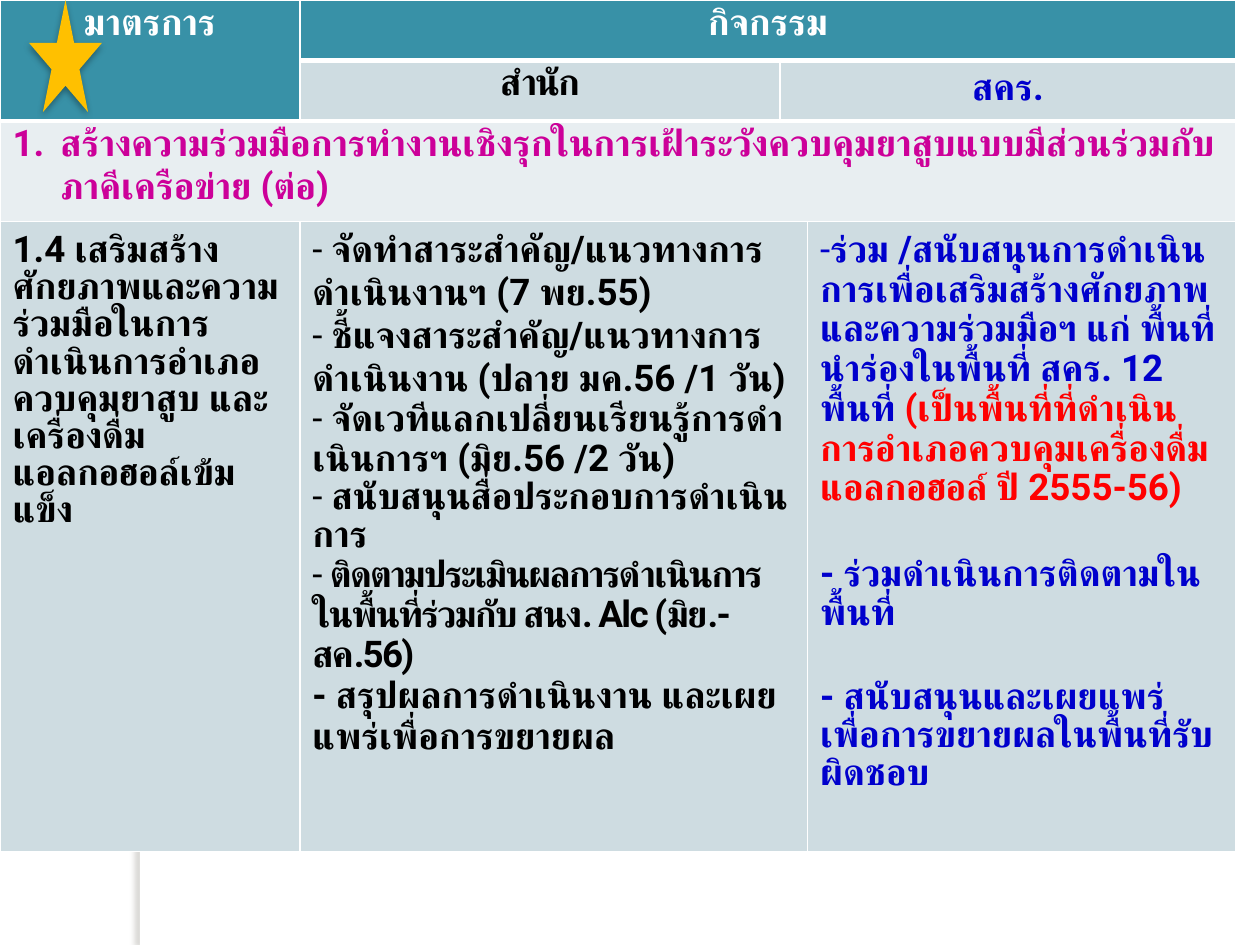
"""Build a slide with a table of measures and activities."""
import pptx
import pptx.util
import pptx.dml.color
import pptx.enum.shapes
import pptx.enum.text
import pptx.oxml
import pptx.oxml.ns
import lxml.etree

Inches = pptx.util.Inches
Pt = pptx.util.Pt
qn = pptx.oxml.ns.qn
FONT = "Roboto"
BLACK, WHITE, BLUE, RED, PINK = "000000", "FFFFFF", "0000CC", "FF0000", "CC0099"
TEAL, MIST, PALE = "3891A7", "CEDCE1", "E8EEF1"
TASKS = [
    (" จัดทำสาระสำคัญ/แนวทางการดำเนินงานฯ (7 พย.55)", 0, 0),
    (" ชี้แจงสาระสำคัญ/แนวทางการดำเนินงาน (ปลาย มค.56 /1 วัน)", 0, 0),
    (" จัดเวทีแลกเปลี่ยนเรียนรู้การดำเนินการฯ (มิย.56 /2 วัน)", 22.9, 0),
    (" สนับสนุนสื่อประกอบการดำเนินการ", 21.7, 0),
    (" ติดตามประเมินผลการดำเนินการ ในพื้นที่ร่วมกับ สนง. Alc (มิย.-สค.56)", 22.9, -1),
]


def color(code):
    """Return the colour for a hex string."""
    return pptx.dml.color.RGBColor.from_string(code)


def line(text, tint=BLACK, **opts):
    """Describe a paragraph made of a single run."""
    return {"runs": [(text, tint)], **opts}


def add_para(para, runs, mark=None, hang=0, gap=0, pitch=0, tight=0, mid=False):
    """Fill a paragraph with styled runs and an optional bullet."""
    if mid:
        para.alignment = pptx.enum.text.PP_ALIGN.CENTER
    if gap:
        para.space_before = Pt(gap)
    if pitch:
        para.line_spacing = Pt(pitch)
    for text, tint in runs:
        run = para.add_run()
        run.text = text
        font = run.font
        font.name, font.size, font.bold = FONT, Pt(21), True
        font.color.rgb = color(tint)
        props = run._r.get_or_add_rPr()
        lxml.etree.SubElement(props, qn("a:cs")).set("typeface", FONT)
        if tight:
            props.set("spc", str(tight * 100))
    if mark:
        props = para._p.get_or_add_pPr()
        props.set("marL", str(Inches(hang)))
        props.set("indent", str(-Inches(hang)))
        lxml.etree.SubElement(props, qn("a:buFont")).set("typeface", FONT)
        if mark == "-":
            lxml.etree.SubElement(props, qn("a:buChar")).set("char", mark)
        else:
            lxml.etree.SubElement(props, qn("a:buAutoNum")).set("type", mark)


def add_edges(cell, base):
    """Draw white borders around a cell, with the given base width."""
    props = cell._tc.get_or_add_tcPr()
    for spot, (side, width) in enumerate(zip("LRTB", (1, 1, 1, base))):
        edge = pptx.oxml.parse_xml(
            f'<a:ln{side} xmlns:a="http://schemas.openxmlformats.org/drawingml/2006/main" '
            f'w="{Pt(width)}"><a:solidFill><a:srgbClr val="{WHITE}"/></a:solidFill></a:ln{side}>')
        props.insert(spot, edge)


def fill_cell(cell, fill, top, paras):
    """Set the fill, the top margin and the paragraphs of a cell."""
    cell.fill.solid()
    cell.fill.fore_color.rgb = color(fill)
    cell.margin_top = Inches(top)
    frame = cell.text_frame
    for spot, item in enumerate(paras):
        para = frame.add_paragraph() if spot else frame.paragraphs[0]
        add_para(para, **item)


def add_grid(slide):
    """Add the table with its merged cells."""
    cols, rows = [2.38, 3.81, 0.22, 3.4], [0.48, 0.48, 0.8, 5]
    frame = slide.shapes.add_table(4, 4, 0, 0, Inches(sum(cols)), Inches(sum(rows)))
    grid = frame.table
    grid.first_row = grid.horz_banding = False
    for col, width in zip(grid.columns, cols):
        col.width = Inches(width)
    for row, height in zip(grid.rows, rows):
        row.height = Inches(height)
    for first, last in [((0, 0), (1, 0)), ((0, 1), (0, 3)), ((1, 2), (1, 3)),
                        ((2, 0), (2, 3)), ((3, 1), (3, 2))]:
        grid.cell(*first).merge(grid.cell(*last))
    cells = {
        (0, 0): (TEAL, 0.01, [line("มาตรการ", WHITE, mid=True)]),
        (0, 1): (TEAL, 0.01, [line("กิจกรรม", WHITE, mid=True)]),
        (1, 1): (MIST, 0.01, [line("สำนัก", tight=-1, mid=True)]),
        (1, 2): (MIST, 0.05, [line("สคร.", BLUE, mid=True)]),
        (2, 0): (PALE, 0.01, [line(
            "สร้างความร่วมมือการทำงานเชิงรุกในการเฝ้าระวังควบคุมยาสูบแบบมีส่วนร่วมกับภาคีเครือข่าย (ต่อ)",
            PINK, mark="arabicPeriod", hang=0.38)]),
        (3, 0): (MIST, 0.1, [line(
            "1.4 เสริมสร้างศักยภาพและความร่วมมือในการดำเนินการอำเภอควบคุมยาสูบ และเครื่องดื่มแอลกอฮอล์เข้มแข็ง",
            pitch=21.25)]),
        (3, 1): (MIST, 0.05,
                 [line(task, mark="-", pitch=pitch, tight=tight) for task, pitch, tight in TASKS]
                 + [line("- สรุปผลการดำเนินงาน และเผยแพร่เพื่อการขยายผล", pitch=23.4)]),
        (3, 3): (MIST, 0.08, [
            {"runs": [("ร่วม /สนับสนุนการดำเนินการเพื่อเสริมสร้างศักยภาพและความร่วมมือฯ แก่ "
                       "พื้นที่นำร่องในพื้นที่ สคร. 12 พื้นที่ ", BLUE),
                      ("(เป็นพื้นที่ที่ดำเนินการอำเภอควบคุมเครื่องดื่มแอลกอฮอล์ ปี 2555-56)", RED)],
             "mark": "-", "pitch": 22.7},
            line("- ร่วมดำเนินการติดตามในพื้นที่", BLUE, gap=26.8, pitch=22.3),
            line("- สนับสนุนและเผยแพร่เพื่อการขยายผลในพื้นที่รับผิดชอบ", BLUE, gap=26.3, pitch=21.7)]),
    }
    for place, (fill, top, paras) in cells.items():
        fill_cell(grid.cell(*place), fill, top, paras)
    for row in range(4):
        for col in range(4):
            add_edges(grid.cell(row, col), 3 if row < 2 else 1)


def add_form(slide, kind, box, fill, shade):
    """Add a plain shape with a soft shadow."""
    form = slide.shapes.add_shape(kind, *map(Inches, box))
    form.fill.solid()
    form.fill.fore_color.rgb = color(fill)
    form.line.fill.background()
    form.shadow.inherit = False
    tint, alpha, blur, dist, angle = shade
    cast = lxml.etree.SubElement(form._element.spPr.find(qn("a:effectLst")), qn("a:outerShdw"))
    for key, value in [("blurRad", Pt(blur)), ("dist", Pt(dist)),
                       ("dir", angle * 60000), ("rotWithShape", 0)]:
        cast.set(key, str(value))
    hue = lxml.etree.SubElement(cast, qn("a:srgbClr"))
    hue.set("val", tint)
    lxml.etree.SubElement(hue, qn("a:alpha")).set("val", str(alpha * 1000))


def main():
    """Build and save the slide."""
    deck = pptx.Presentation()
    deck.slide_width, deck.slide_height = Inches(10), Inches(7.5)
    slide = deck.slides.add_slide(deck.slide_layouts[6])
    kinds = pptx.enum.shapes.MSO_SHAPE
    add_form(slide, kinds.RECTANGLE, (1.11, 0, 0.08, 7.5), WHITE, ("736F63", 25, 3, 3, 180))
    add_grid(slide)
    add_form(slide, kinds.STAR_5_POINT, (0.23, 0, 0.58, 0.89), "FFC000", ("000000", 35, 4, 2, 90))
    deck.save("out.pptx")


if __name__ == "__main__":
    main()
